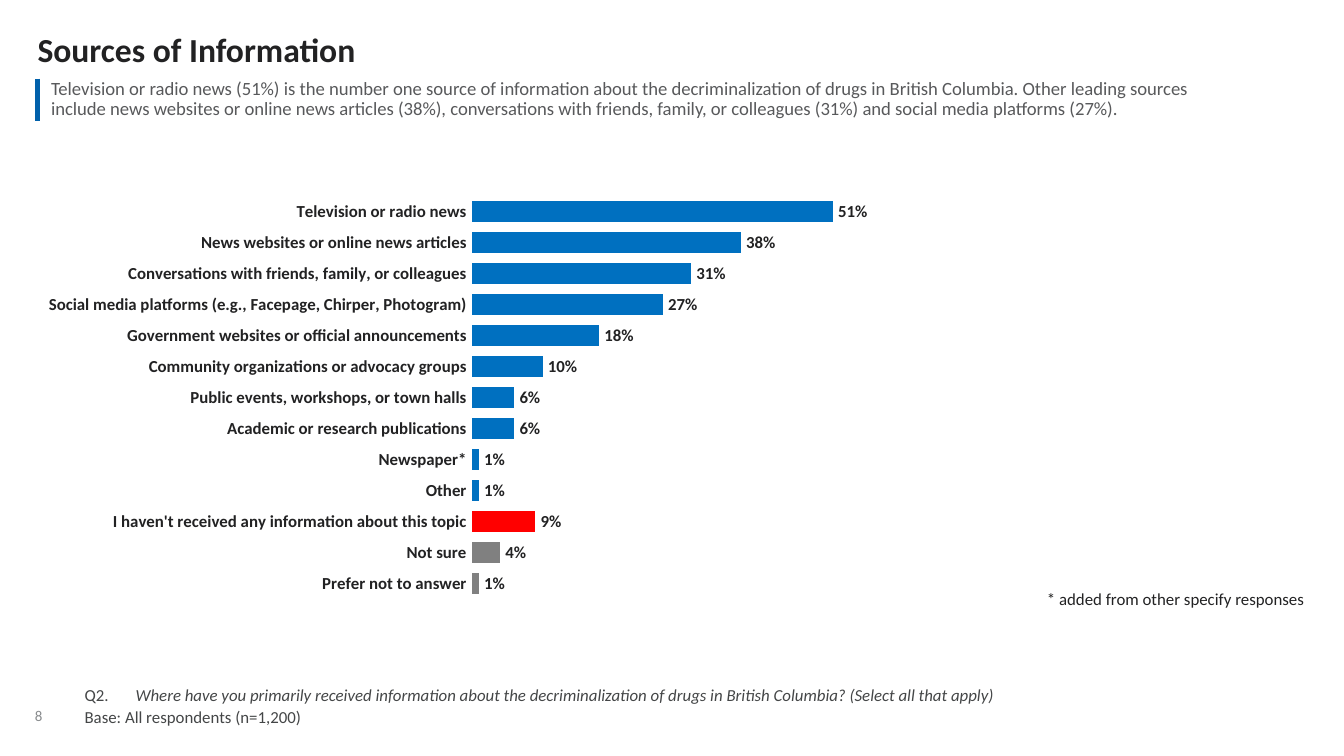
import pptx
import pptx.chart.data
import pptx.dml.color
import pptx.enum.chart
import pptx.enum.text
import pptx.oxml
import pptx.oxml.ns
import pptx.util
from pptx.util import Inches

FONT = "Calibri"
INK = "222223"
BLUE, RED, GREY = "0070C0", "FF0000", "808080"
ANCHOR = pptx.enum.text.MSO_ANCHOR

SUMMARY = (
    "Television or radio news (51%) is the number one source of information about "
    "the decriminalization of drugs in British Columbia. Other leading sources "
    "include news websites or online news articles (38%), conversations with "
    "friends, family, or colleagues (31%) and social media platforms (27%)."
)
QUESTION = (
    "Where have you primarily received information about the decriminalization "
    "of drugs in British Columbia? (Select all that apply)"
)
SOURCES = [
    ("Television or radio news", 0.51, BLUE),
    ("News websites or online news articles", 0.38, BLUE),
    ("Conversations with friends, family, or colleagues", 0.31, BLUE),
    ("Social media platforms (e.g., Facepage, Chirper, Photogram)", 0.27, BLUE),
    ("Government websites or official announcements", 0.18, BLUE),
    ("Community organizations or advocacy groups", 0.10, BLUE),
    ("Public events, workshops, or town halls", 0.06, BLUE),
    ("Academic or research publications", 0.06, BLUE),
    ("Newspaper*", 0.01, BLUE),
    ("Other", 0.01, BLUE),
    ("I haven't received any information about this topic", 0.09, RED),
    ("Not sure", 0.04, GREY),
    ("Prefer not to answer", 0.01, GREY),
]


def rgb(code):
    return pptx.dml.color.RGBColor.from_string(code)


def set_font(font, size, color, bold=False):
    font.name = FONT
    font.size = pptx.util.Pt(size)
    font.bold = bold
    font.color.rgb = rgb(color)


def add_text(page, place, paragraphs, size, color, bold=False, spacing=0.9,
             after=0, anchor=ANCHOR.TOP, wrap=True, hanging=0):
    """Each paragraph is a list of (text, italic) runs."""
    box = page.shapes.add_textbox(*map(Inches, place))
    frame = box.text_frame
    frame.margin_left = frame.margin_right = frame.margin_top = frame.margin_bottom = 0
    frame.word_wrap = wrap
    frame.vertical_anchor = anchor
    for index, runs in enumerate(paragraphs):
        para = frame.add_paragraph() if index else frame.paragraphs[0]
        para.line_spacing = spacing
        para.space_after = pptx.util.Pt(after)
        if hanging:
            properties = para._p.get_or_add_pPr()
            properties.set("marL", str(Inches(hanging)))
            properties.set("indent", str(-Inches(hanging)))
        set_font(para.font, size, color, bold)
        for text, italic in runs:
            span = para.add_run()
            span.text = text
            if italic:
                span.font.italic = True


def add_border(cell, side, color, width):
    line = pptx.oxml.parse_xml(
        f'<a:{side} {pptx.oxml.ns.nsdecls("a")} w="{pptx.util.Pt(width)}">'
        f'<a:solidFill><a:srgbClr val="{color}"/></a:solidFill></a:{side}>'
    )
    cell._tc.get_or_add_tcPr().insert(0, line)


def add_summary(page):
    table = page.shapes.add_table(
        1, 1, Inches(0.28), Inches(0.59), Inches(9), Inches(0.3)).table
    table.first_row = table.horz_banding = False
    cell = table.cell(0, 0)
    cell.fill.background()
    cell.margin_left = cell.margin_right = Inches(0.1)
    cell.margin_top = cell.margin_bottom = 0
    cell.vertical_anchor = ANCHOR.MIDDLE
    cell.text = SUMMARY
    para = cell.text_frame.paragraphs[0]
    para.line_spacing = 0.9
    para.space_after = pptx.util.Pt(3)
    set_font(para.font, 10, "58595B")
    add_border(cell, "lnR", "FFFFFF", 1)
    add_border(cell, "lnL", "0161AB", 3)


def set_plot_layout(chart, **fractions):
    """Fix the inner plot area at fractions x, y, w, h of the chart."""
    area = chart._chartSpace.chart.plotArea
    for old in area.findall(pptx.oxml.ns.qn("c:layout")):
        area.remove(old)
    modes = '<c:xMode val="edge"/><c:yMode val="edge"/>'
    sizes = "".join(f'<c:{key} val="{value}"/>' for key, value in fractions.items())
    area.insert(0, pptx.oxml.parse_xml(
        f'<c:layout {pptx.oxml.ns.nsdecls("c")}><c:manualLayout>'
        f'<c:layoutTarget val="inner"/>{modes}{sizes}</c:manualLayout></c:layout>'
    ))


def add_sources_chart(page):
    names, shares, colors = zip(*SOURCES)
    data = pptx.chart.data.CategoryChartData(number_format="0%")
    data.categories = names
    data.add_series("Series 1", shares)
    chart = page.shapes.add_chart(
        pptx.enum.chart.XL_CHART_TYPE.BAR_CLUSTERED,
        Inches(0.28), Inches(1.46), Inches(8.5), Inches(3), data).chart
    set_font(chart.font, 9, INK, bold=True)
    chart.has_legend = chart.has_title = False
    set_plot_layout(chart, x=0.38, y=0, w=0.62, h=1)

    for axis in (chart.category_axis, chart.value_axis):
        axis.major_tick_mark = axis.minor_tick_mark = pptx.enum.chart.XL_TICK_MARK.NONE
        axis.has_major_gridlines = False
        axis.format.line.fill.background()
    chart.category_axis.reverse_order = True
    scale = chart.value_axis
    scale.tick_label_position = pptx.enum.chart.XL_TICK_LABEL_POSITION.NONE
    scale.minimum_scale, scale.maximum_scale, scale.major_unit = 0, 1, 0.2

    plot = chart.plots[0]
    plot.gap_width = 50
    plot.vary_by_categories = False
    plot.has_data_labels = True
    labels = plot.data_labels
    labels.show_value = True
    labels.number_format = "0%"
    labels.number_format_is_linked = False
    labels.position = pptx.enum.chart.XL_LABEL_POSITION.OUTSIDE_END
    bars = plot.series[0]
    bars.format.fill.solid()
    bars.format.fill.fore_color.rgb = rgb(BLUE)
    for index, color in enumerate(colors):
        if color != BLUE:
            fill = bars.points[index].format.fill
            fill.solid()
            fill.fore_color.rgb = rgb(color)


def main():
    deck = pptx.Presentation()
    deck.slide_width = Inches(10)
    deck.slide_height = deck.slide_width * 9 // 16
    page = deck.slides.add_slide(deck.slide_layouts[6])

    add_text(page, (0.26, 5.13, 0.34, 0.26), [[("8", False)]], 8, "888B8D",
             spacing=0.85, anchor=ANCHOR.BOTTOM, wrap=False)
    add_text(page, (0.28, 0.25, 9.46, 0.27), [[("Sources of Information", False)]],
             18, INK, bold=True)
    add_text(page, (0.63, 5.1, 8.4, 0.31),
             [[("Q2.\t", False), (QUESTION, True)],
              [("Base: All respondents (n=1,200)", False)]],
             9, "444647", after=2, anchor=ANCHOR.BOTTOM, hanging=0.38)
    add_summary(page)
    add_sources_chart(page)
    add_text(page, (7.79, 4.38, 1.93, 0.15),
             [[("* added from other specify responses", False)]], 9, INK, spacing=1.0)
    deck.save("out.pptx")


if __name__ == "__main__":
    main()
